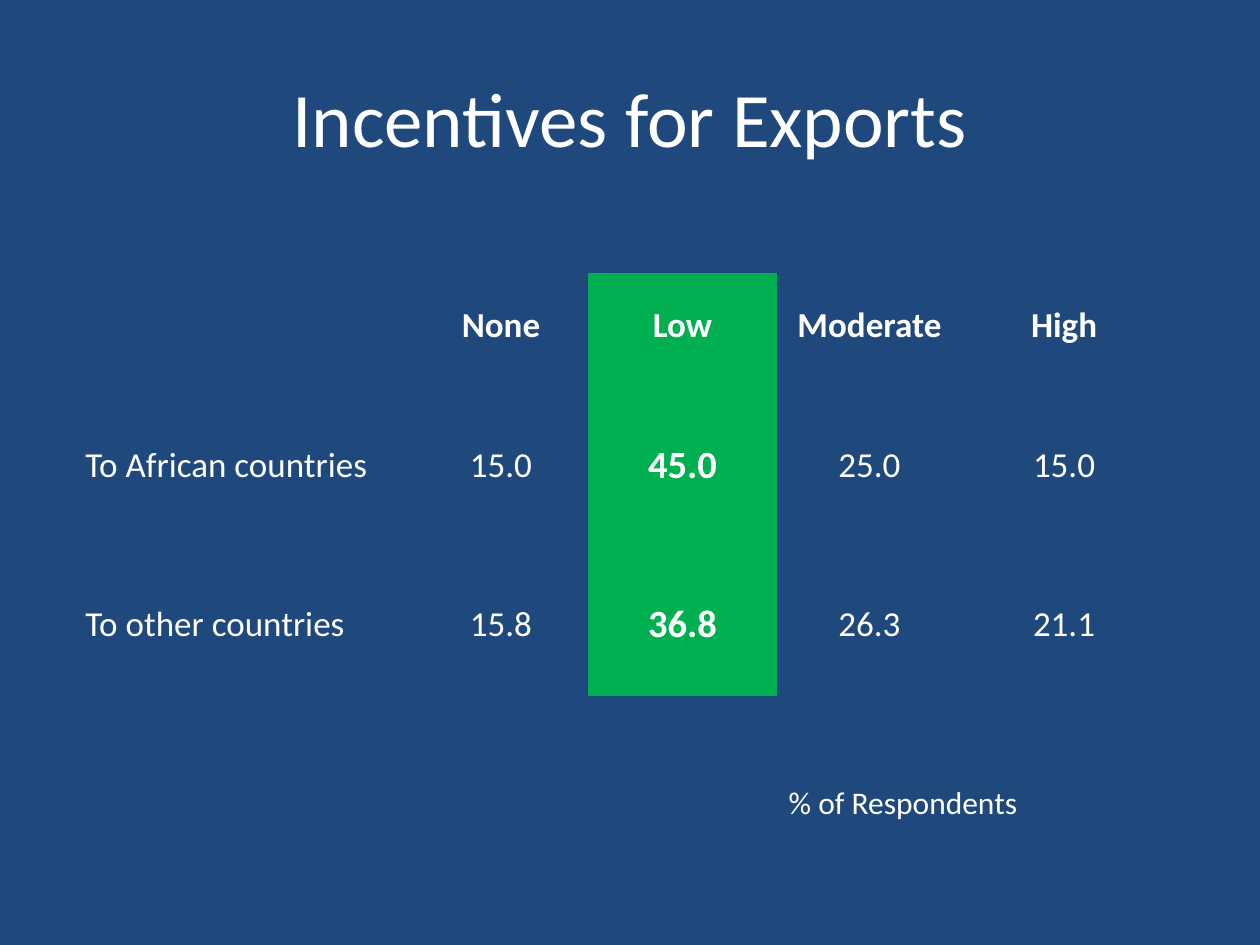
from pptx import Presentation
from pptx.dml.color import RGBColor
from pptx.enum.text import MSO_ANCHOR, PP_ALIGN
from pptx.oxml.ns import qn
from pptx.util import Pt

NAVY = RGBColor(0x1F, 0x49, 0x7D)
GREEN = RGBColor(0x00, 0xB0, 0x50)
WHITE = RGBColor(0xFF, 0xFF, 0xFF)
FONT = "Calibri"
NO_GRID_STYLE = "{2D5ABB26-0587-4C30-8999-92F81FD0307C}"

RESPONSES = [
    ["", "None", "Low", "Moderate", "High"],
    ["To African countries", "15.0", "45.0", "25.0", "15.0"],
    ["To other countries", "15.8", "36.8", "26.3", "21.1"],
]
HIGHLIGHT_COLUMN = 2
COLUMN_WIDTHS = [188.6, 99.4, 108, 105.8, 116.6]
ROW_HEIGHTS = [59.8, 99.4, 82.8]


def write(frame, text, size, align=PP_ALIGN.CENTER, bold=False):
    paragraph = frame.paragraphs[0]
    paragraph.alignment = align
    run = paragraph.add_run()
    run.text = text
    run.font.name = FONT
    run.font.size = Pt(size)
    run.font.bold = bold
    run.font.color.rgb = WHITE


def add_title(slide, text):
    title = slide.shapes.title
    title.left, title.top, title.width, title.height = Pt(36), Pt(21.6), Pt(648), Pt(90)
    title.text_frame.vertical_anchor = MSO_ANCHOR.MIDDLE
    write(title.text_frame, text, 44)


def fill_cell(cell, text, row, column):
    highlighted = column == HIGHLIGHT_COLUMN
    cell.fill.solid()
    cell.fill.fore_color.rgb = GREEN if highlighted else NAVY
    cell.vertical_anchor = MSO_ANCHOR.MIDDLE
    cell.margin_left = cell.margin_right = cell.margin_top = Pt(0.75)
    cell.margin_bottom = Pt(0)
    if text:
        write(
            cell.text_frame,
            text,
            size=22 if highlighted and row > 0 else 20,
            align=PP_ALIGN.CENTER if column > 0 else PP_ALIGN.LEFT,
            bold=highlighted or row == 0,
        )


def add_response_table(slide):
    frame = slide.shapes.add_table(
        len(ROW_HEIGHTS), len(COLUMN_WIDTHS), Pt(48), Pt(156),
        Pt(sum(COLUMN_WIDTHS)), Pt(sum(ROW_HEIGHTS)))
    table = frame.table
    table.first_row = table.horz_banding = False
    frame._element.find(".//" + qn("a:tableStyleId")).text = NO_GRID_STYLE
    for column, width in zip(table.columns, COLUMN_WIDTHS):
        column.width = Pt(width)
    for row, height in zip(table.rows, ROW_HEIGHTS):
        row.height = Pt(height)
    for r, values in enumerate(RESPONSES):
        for c, text in enumerate(values):
            fill_cell(table.cell(r, c), text, r, c)


def add_unit_note(slide, text):
    note = slide.shapes.add_textbox(Pt(348), Pt(444), Pt(336), Pt(29))
    note.text_frame.word_wrap = True
    write(note.text_frame, text, 18)


def main():
    deck = Presentation()
    deck.slide_width, deck.slide_height = Pt(720), Pt(540)
    slide = deck.slides.add_slide(deck.slide_layouts.get_by_name("Title Only"))
    slide.background.fill.solid()
    slide.background.fill.fore_color.rgb = NAVY
    add_title(slide, "Incentives for Exports")
    add_response_table(slide)
    add_unit_note(slide, "% of Respondents")
    deck.save("out.pptx")


if __name__ == "__main__":
    main()
